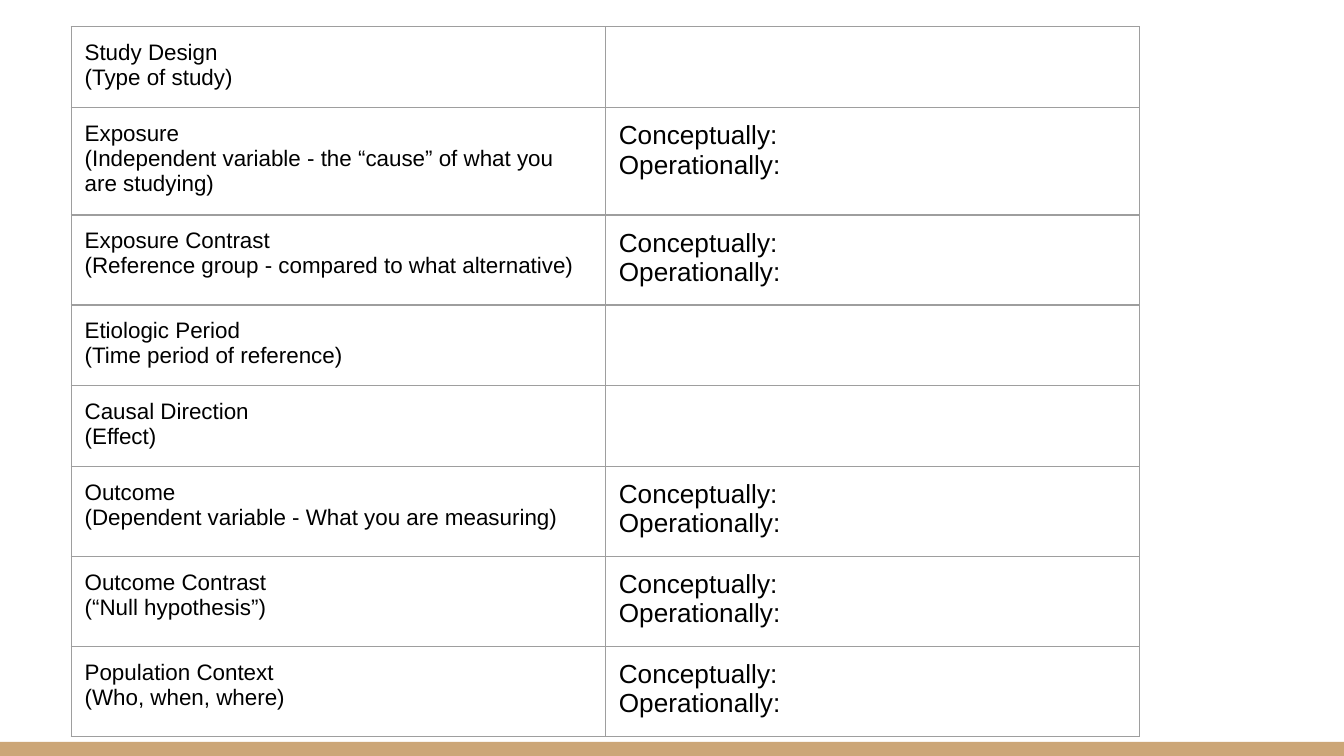
from lxml import etree
from pptx import Presentation
from pptx import util as u
from pptx.dml.color import RGBColor
from pptx.enum import shapes
from pptx.oxml.ns import qn

BLACK = RGBColor(0x00, 0x00, 0x00)
GRAY = RGBColor(0x9E, 0x9E, 0x9E)
TAN = RGBColor(0xCC, 0xA6, 0x77)

BOTH = ["Conceptually:", "Operationally:"]
# Row height, label, explanation, answer prompts
ROWS = [
    (0.6, "Study Design", "(Type of study)", []),
    (0.8, "Exposure",
     "(Independent variable - the “cause” of what you are studying)", BOTH),
    (0.67, "Exposure Contrast",
     "(Reference group - compared to what alternative)", BOTH),
    (0.6, "Etiologic Period", "(Time period of reference)", []),
    (0.6, "Causal Direction", "(Effect)", []),
    (0.67, "Outcome", "(Dependent variable - What you are measuring)", BOTH),
    (0.67, "Outcome Contrast", "(“Null hypothesis”)", BOTH),
    (0.67, "Population Context", "(Who, when, where)", BOTH),
]


def add_bar(s):
    sp = s.shapes.add_shape(shapes.MSO_SHAPE.RECTANGLE, u.Inches(0),
                            u.Inches(5.52), u.Inches(10), u.Inches(0.11))
    sp.shadow.inherit = False
    sp.fill.solid()
    sp.fill.fore_color.rgb = TAN
    sp.line.fill.background()


def set_borders(cell):
    tcPr = cell._tc.get_or_add_tcPr()
    for side in ("lnL", "lnR", "lnT", "lnB"):
        ln = etree.SubElement(tcPr, qn(f"a:{side}"), w=str(u.Pt(0.75)))
        fill = etree.SubElement(ln, qn("a:solidFill"))
        etree.SubElement(fill, qn("a:srgbClr"), val=str(GRAY))


def fill_cell(cell, lines, size):
    set_borders(cell)
    cell.fill.background()
    for side in ("left", "right", "top", "bottom"):
        setattr(cell, f"margin_{side}", u.Inches(0.1))
    tf = cell.text_frame
    for i, line in enumerate(lines):
        p = tf.paragraphs[0] if i == 0 else tf.add_paragraph()
        r = p.add_run()
        r.text = line
        for name, value in {"name": "Arial", "size": u.Pt(size)}.items():
            setattr(r.font, name, value)
        r.font.color.rgb = BLACK


def add_study_table(s):
    height = sum(row[0] for row in ROWS)
    table = s.shapes.add_table(len(ROWS), 2, u.Inches(0.53), u.Inches(0.2),
                               u.Inches(7.95), u.Inches(height)).table
    table.first_row = table.horz_banding = False
    for i, (row_height, label, note, prompts) in enumerate(ROWS):
        table.rows[i].height = u.Inches(row_height)
        fill_cell(table.cell(i, 0), [label, note], 12)
        fill_cell(table.cell(i, 1), prompts, 14)


def main():
    prs = Presentation()
    # Widescreen 16:9
    prs.slide_width = u.Inches(10)
    prs.slide_height = prs.slide_width * 9 // 16
    s = prs.slides.add_slide(prs.slide_layouts[6])
    # Bottom bar
    add_bar(s)
    # Study worksheet
    add_study_table(s)
    prs.save("out.pptx")


if __name__ == "__main__":
    main()
